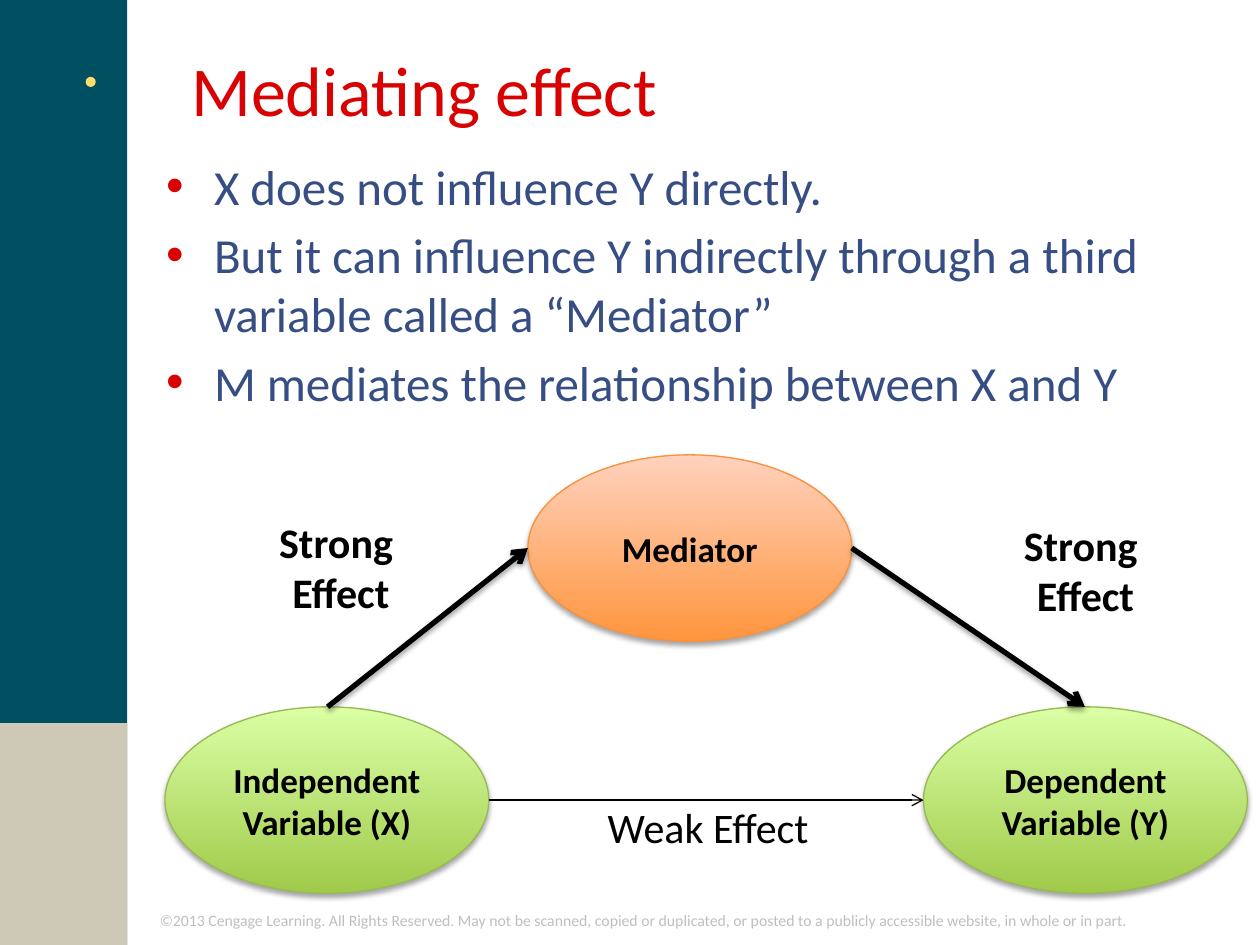
from lxml import etree
from pptx import Presentation
from pptx.dml.color import RGBColor
from pptx.enum.shapes import MSO_CONNECTOR, MSO_SHAPE
from pptx.enum.text import MSO_ANCHOR, PP_ALIGN
from pptx.oxml import parse_xml
from pptx.oxml.ns import nsdecls, qn
from pptx.util import Inches, Pt

rgb = RGBColor.from_string


def add_effects(sp, alpha=0, dist=0):
    """Give a shape a soft shadow below it, or none when alpha is 0."""
    shadow = (f'<a:outerShdw blurRad="40000" dist="{dist}" dir="5400000" rotWithShape="0">'
              f'<a:srgbClr val="000000"><a:alpha val="{alpha}000"/></a:srgbClr>'
              f'</a:outerShdw>') if alpha else ""
    sp._element.spPr.append(
        parse_xml(f'<a:effectLst {nsdecls("a")}>{shadow}</a:effectLst>'))


def write(sp, lines, size, color, bold=False, align=PP_ALIGN.LEFT,
          anchor=MSO_ANCHOR.TOP, wrap=True):
    """Set the lines of a shape as paragraphs in one style."""
    tf = sp.text_frame
    tf.word_wrap = wrap
    tf.vertical_anchor = anchor
    tf.text = "\n".join(lines)
    for p in tf.paragraphs:
        p.alignment = align
        for r in p.runs:
            r.font.name = "Calibri"
            r.font.size = Pt(size)
            r.font.bold = bold
            r.font.color.rgb = rgb(color)
    return tf


prs = Presentation()
prs.slide_width, prs.slide_height = Inches(10), Inches(7.5)
s = prs.slides.add_slide(prs.slide_layouts[6])

# Side band and dot
for kind, x, y, w, h, color in [
    (MSO_SHAPE.RECTANGLE, 0, 0, 1.01, 7.5, "005061"),
    (MSO_SHAPE.RECTANGLE, 0, 5.74, 1.01, 1.76, "CEC9B6"),
    (MSO_SHAPE.OVAL, 0.68, 0.61, 0.08, 0.08, "FFDE6A"),
]:
    sp = s.shapes.add_shape(kind, Inches(x), Inches(y), Inches(w), Inches(h))
    sp.shadow.inherit = False
    sp.fill.solid()
    sp.fill.fore_color.rgb = rgb(color)
    sp.line.fill.background()

# Copyright line
sp = s.shapes.add_textbox(Inches(1.17), Inches(7.18), Inches(8.83), Inches(0.25))
write(sp, ["©2013 Cengage Learning. All Rights Reserved. May not be scanned, copied or "
           "duplicated, or posted to a publicly accessible website, in whole or in part."],
      9, "BFBFBF")

# Title
sp = s.shapes.add_textbox(Inches(1.42), Inches(0.22), Inches(8.73), Inches(0.96))
write(sp, ["Mediating effect"], 40, "D80202", anchor=MSO_ANCHOR.MIDDLE)

# Bullets
sp = s.shapes.add_textbox(Inches(1.22), Inches(1.19), Inches(8.69), Inches(2.57))
tf = write(sp, ["X does not influence Y directly.",
                "But it can influence Y indirectly through a third variable "
                "called a “Mediator”",
                "M mediates the relationship between X and Y"], 28, "364E84")
for i, p in enumerate(tf.paragraphs):
    p.space_before = Pt(5.6 if i else 0)
    pPr = p._p.get_or_add_pPr()
    pPr.set("marL", str(Inches(0.38)))
    pPr.set("indent", str(-Inches(0.38)))
    color = etree.SubElement(pPr, qn("a:buClr"))
    etree.SubElement(color, qn("a:srgbClr"), val="D80202")
    etree.SubElement(pPr, qn("a:buSzPct"), val="102000")
    etree.SubElement(pPr, qn("a:buFont"), typeface="Arial")
    etree.SubElement(pPr, qn("a:buChar"), char="•")

# Variables
GREEN = ("A0CA4A", "DAFFA5", "98B955")
ORANGE = ("FF953E", "FFD2BD", "F69240")
for x, y, lines, (bottom, top, edge) in [
    (1.31, 5.61, ["Independent", "Variable (X)"], GREEN),
    (7.33, 5.61, ["Dependent", "Variable (Y)"], GREEN),
    (4.19, 3.61, ["Mediator"], ORANGE),
]:
    sp = s.shapes.add_shape(MSO_SHAPE.OVAL, Inches(x), Inches(y), Inches(2.57), Inches(1.48))
    sp.fill.gradient()
    sp.fill.gradient_angle = 90
    for stop, color in zip(sp.fill.gradient_stops, (bottom, top)):
        stop.color.rgb = rgb(color)
    sp.line.color.rgb = rgb(edge)
    sp.line.width = Pt(0.75)
    add_effects(sp, 35, 23000)
    write(sp, lines, 20, "000000", True, PP_ALIGN.CENTER, MSO_ANCHOR.MIDDLE)

# Arrows between the variables
for x1, y1, x2, y2, width, alpha in [
    (3.88, 6.35, 7.33, 6.35, 0.75, 0),
    (2.6, 5.61, 4.19, 4.35, 3, 38),
    (6.76, 4.35, 8.61, 5.61, 3, 38),
]:
    line = s.shapes.add_connector(MSO_CONNECTOR.STRAIGHT, Inches(x1), Inches(y1),
                                  Inches(x2), Inches(y2))
    line.line.color.rgb = rgb("000000")
    line.line.width = Pt(width)
    etree.SubElement(line.line._get_or_add_ln(), qn("a:tailEnd"), type="arrow")
    add_effects(line, alpha, 20000)

# Effect labels
for x, y, w, h, lines, bold in [
    (2.11, 4.05, 1.19, 0.91, ["Strong ", "Effect"], True),
    (8.02, 4.07, 1.19, 0.91, ["Strong ", "Effect"], True),
    (4.06, 6.31, 3.12, 0.5, ["Weak Effect"], False),
]:
    sp = s.shapes.add_textbox(Inches(x), Inches(y), Inches(w), Inches(h))
    write(sp, lines, 24, "000000", bold, PP_ALIGN.CENTER, wrap=not bold)

prs.save("out.pptx")
